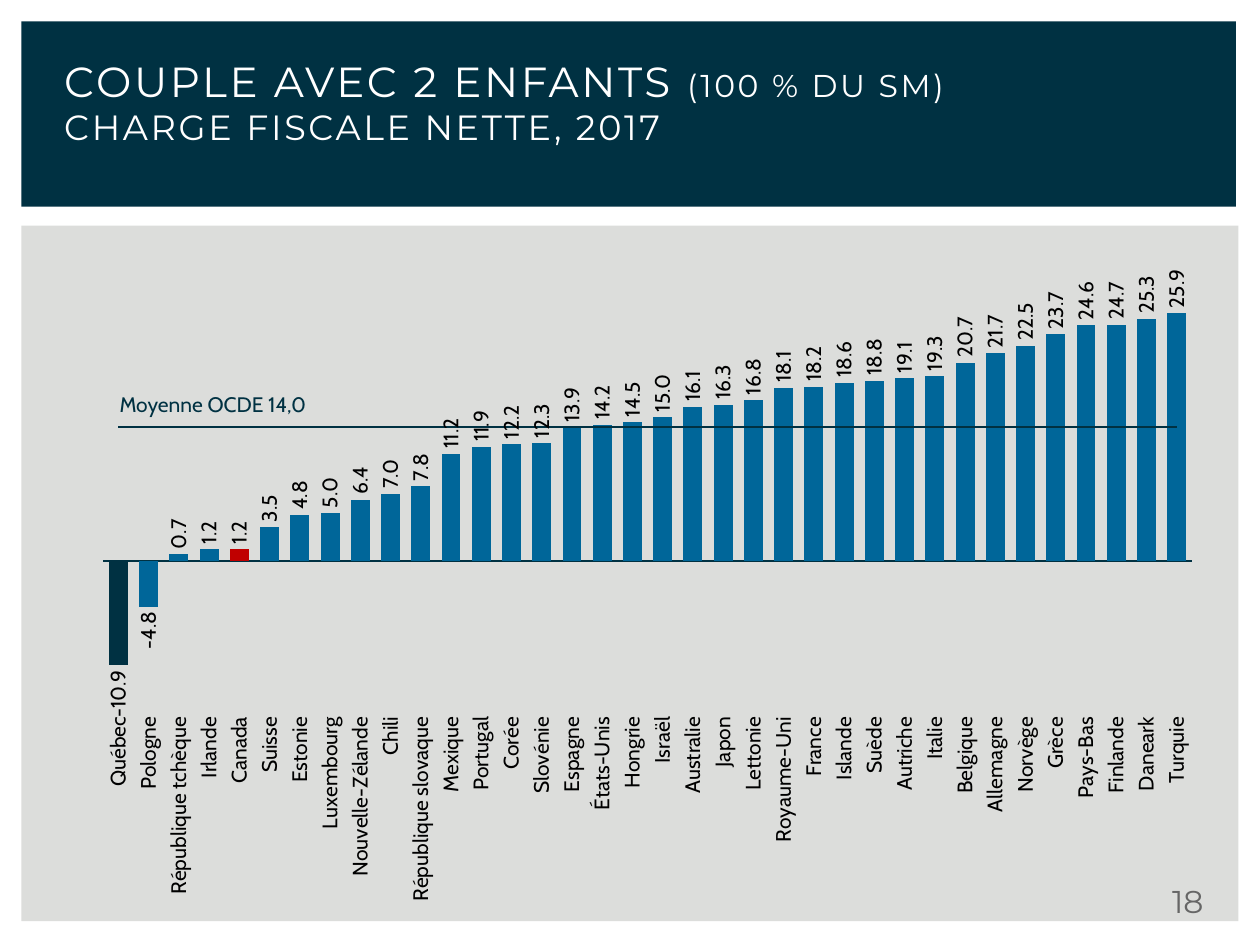
import pptx
import pptx.chart.data
import pptx.dml.color
import pptx.enum.chart
import pptx.enum.shapes
import pptx.enum.text
import pptx.oxml
import pptx.oxml.ns
import pptx.util
from pptx.util import Inches

NAVY, BLUE, RED, BLACK = "003142", "006699", "C00000", "000000"
NUMBER_FORMAT = r"##0.0;\-##0.0;0.0;"


def color(value):
    return pptx.dml.color.RGBColor.from_string(value)


def add_text(slide, lines, left, top, width, height, font="Montserrat",
             fill=BLACK, align="LEFT", spacing=0):
    """Each line is a list of (text, size) runs."""
    frame = slide.shapes.add_textbox(
        Inches(left), Inches(top), Inches(width), Inches(height)).text_frame
    frame.word_wrap = True
    for index, line in enumerate(lines):
        paragraph = frame.add_paragraph() if index else frame.paragraphs[0]
        paragraph.alignment = getattr(pptx.enum.text.PP_ALIGN, align)
        for text, size in line:
            run = paragraph.add_run()
            run.text = text
            run.font.name = font
            run.font.size = pptx.util.Pt(size)
            run.font.color.rgb = color(fill)
            if spacing:
                run.font._element.set("spc", str(spacing))


presentation = pptx.Presentation()
presentation.slide_width = Inches(10)
presentation.slide_height = Inches(7.5)
slide = presentation.slides.add_slide(presentation.slide_layouts[6])

# Content panel and title band
for top, width, height, fill in [(1.79, 9.66, 5.52, "DCDDDB"),
                                 (0.17, 9.64, 1.47, NAVY)]:
    panel = slide.shapes.add_shape(
        pptx.enum.shapes.MSO_SHAPE.RECTANGLE,
        Inches(0.17), Inches(top), Inches(width), Inches(height))
    panel.shadow.inherit = False
    panel.fill.solid()
    panel.fill.fore_color.rgb = color(fill)
    panel.line.fill.background()

# Page number and title
add_text(slide, [[("18", 18)]], 9.01, 6.95, 0.64, 0.3,
         fill="666666", align="RIGHT")
add_text(slide, [[("COUPLE AVEC 2 ENFANTS ", 24), ("(100 % DU SM)", 18)],
                 [("CHARGE FISCALE NETTE, 2017", 20)]],
         0.41, 0.39, 8.29, 1.06, fill="FFFFFF", spacing=150)

# Net tax burden by country
burdens = {
    "Québec": -10.9, "Pologne": -4.8, "République tchèque": 0.7,
    "Irlande": 1.2, "Canada": 1.2, "Suisse": 3.5, "Estonie": 4.8,
    "Luxembourg": 5.0, "Nouvelle-Zélande": 6.4, "Chili": 7.0,
    "République slovaque": 7.8, "Mexique": 11.2, "Portugal": 11.9,
    "Corée": 12.2, "Slovénie": 12.3, "Espagne": 13.9, "États-Unis": 14.2,
    "Hongrie": 14.5, "Israël": 15.0, "Australie": 16.1, "Japon": 16.3,
    "Lettonie": 16.8, "Royaume-Uni": 18.1, "France": 18.2, "Islande": 18.6,
    "Suède": 18.8, "Autriche": 19.1, "Italie": 19.3, "Belgique": 20.7,
    "Allemagne": 21.7, "Norvège": 22.5, "Grèce": 23.7, "Pays-Bas": 24.6,
    "Finlande": 24.7, "Daneark": 25.3, "Turquie": 25.9,
}
countries = list(burdens)
figures = pptx.chart.data.CategoryChartData(number_format="0.0")
figures.categories = countries
figures.add_series("Series 1", list(burdens.values()))
figures.add_series("Series 2", [14] * len(countries))
chart = slide.shapes.add_chart(
    pptx.enum.chart.XL_CHART_TYPE.COLUMN_CLUSTERED,
    Inches(0.64), Inches(2.07), Inches(9), Inches(5.18), figures).chart
chart.has_legend = False
chart.has_title = False
chart.font.name = "Cabin"
chart.font.size = pptx.util.Pt(12)
chart.font.color.rgb = color(BLACK)

# Axes
country_axis = chart.category_axis
country_axis.tick_label_position = pptx.enum.chart.XL_TICK_LABEL_POSITION.LOW
country_axis.major_tick_mark = pptx.enum.chart.XL_TICK_MARK.NONE
country_axis.format.line.color.rgb = color(NAVY)
country_axis.format.line.width = pptx.util.Pt(0.75)
burden_axis = chart.value_axis
burden_axis.minimum_scale = -15
burden_axis.maximum_scale = 30
burden_axis.has_major_gridlines = False
burden_axis.visible = False

# Second series becomes the average line on the same axes
bars = chart.plots[0]
bars.gap_width = 60
bars.overlap = -27
bars.vary_by_categories = False
bar_xml = chart.element.xpath(".//c:barChart")[0]
line_xml = pptx.oxml.parse_xml(
    f'<c:lineChart {pptx.oxml.ns.nsdecls("c")}><c:grouping val="standard"/>'
    '<c:varyColors val="0"/><c:marker val="1"/></c:lineChart>')
average_xml = bar_xml.xpath("c:ser")[1]
for flag in average_xml.xpath("c:invertIfNegative"):
    average_xml.remove(flag)
line_xml.insert(2, average_xml)
for axis_id in bar_xml.xpath("c:axId"):
    line_xml.append(pptx.oxml.parse_xml(
        f'<c:axId {pptx.oxml.ns.nsdecls("c")} val="{axis_id.get("val")}"/>'))
bar_xml.addnext(line_xml)
average = chart.plots[1].series[0]
average.smooth = False
average.marker.style = pptx.enum.chart.XL_MARKER_STYLE.NONE
average.format.line.color.rgb = color(NAVY)
average.format.line.width = pptx.util.Pt(1)

# Bar colours, with Québec and Canada picked out
burden = bars.series[0]
burden.invert_if_negative = False
burden.format.fill.solid()
burden.format.fill.fore_color.rgb = color(BLUE)
for country, fill in [("Québec", NAVY), ("Canada", RED)]:
    bar = burden.points[countries.index(country)].format.fill
    bar.solid()
    bar.fore_color.rgb = color(fill)

# Value labels
labels = burden.data_labels
labels.show_value = True
labels.number_format = NUMBER_FORMAT
labels.number_format_is_linked = False
labels.position = pptx.enum.chart.XL_LABEL_POSITION.OUTSIDE_END

# Country and value labels read upwards
for part in (country_axis.tick_labels, labels):
    part.font.name = "Cabin"
    part.font.size = pptx.util.Pt(12)
    part.font.color.rgb = color(BLACK)
for body in chart.element.xpath(".//c:catAx/c:txPr/a:bodyPr"
                                "|.//c:dLbls/c:txPr/a:bodyPr"):
    body.set("rot", "-5400000")
    body.set("vert", "horz")

# Plot area position, as shares of the chart
plot_area = chart.element.xpath(".//c:plotArea")[0]
for layout in plot_area.xpath("c:layout"):
    plot_area.remove(layout)
shares = "".join(f'<c:{name} val="{share}"/>' for name, share in
                 [("x", 0.02), ("y", 0.02), ("w", 0.96), ("h", 0.66)])
plot_area.insert(0, pptx.oxml.parse_xml(
    f'<c:layout {pptx.oxml.ns.nsdecls("c")}><c:manualLayout>'
    '<c:layoutTarget val="inner"/><c:xMode val="edge"/><c:yMode val="edge"/>'
    f'{shares}</c:manualLayout></c:layout>'))

# Average caption
add_text(slide, [[("Moyenne OCDE 14,0", 12)]], 0.85, 3.06, 2.12, 0.2,
         font="Cabin", fill=NAVY)

presentation.save("out.pptx")
